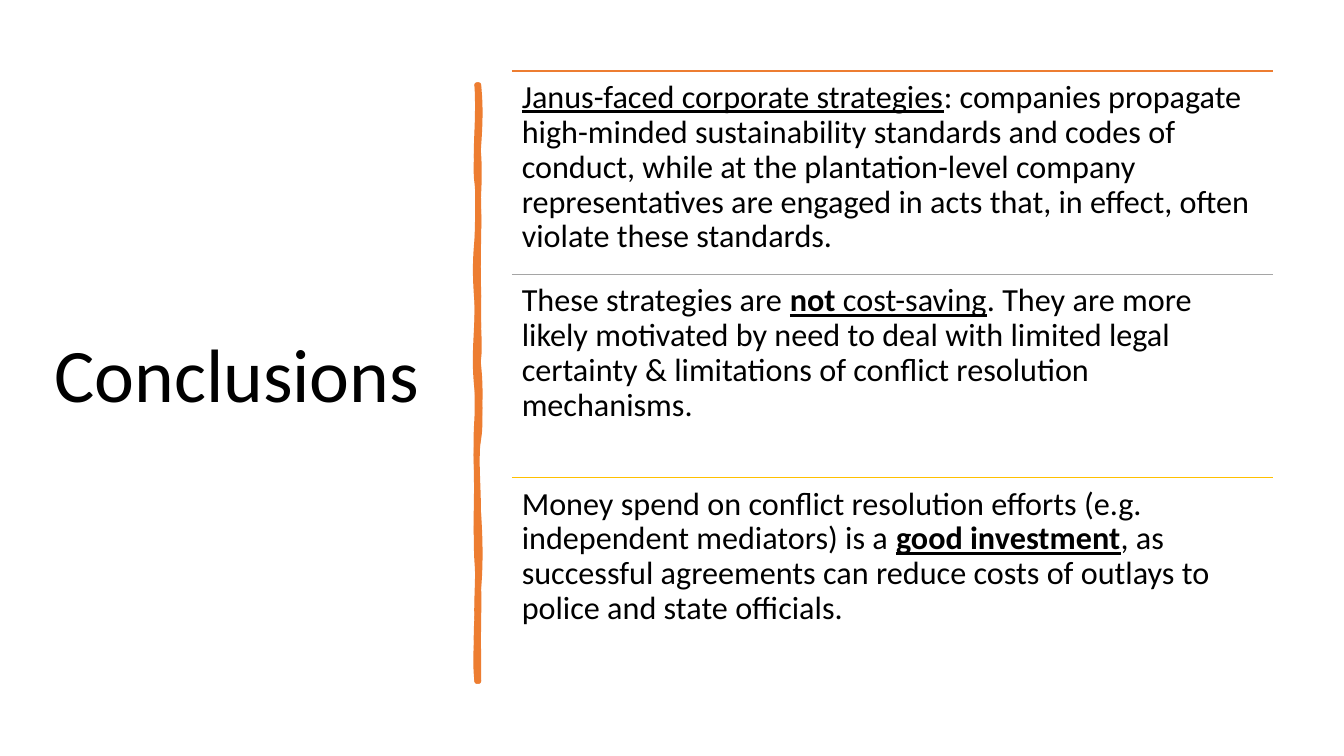
from lxml import etree
from pptx import Presentation
from pptx.dml.color import RGBColor
from pptx.enum.shapes import MSO_CONNECTOR
from pptx.enum.text import MSO_ANCHOR
from pptx.oxml.ns import qn
from pptx.util import Cm, Pt

STRAIGHT = MSO_CONNECTOR.STRAIGHT
TOP, MIDDLE = MSO_ANCHOR.TOP, MSO_ANCHOR.MIDDLE
ORANGE = "ED7D31"
UNIT = Cm(2.54)
RIGHT_EDGE, LEFT_EDGE = 4.75, 4.73
BAR_TOP, BAR_BOTTOM = 0.84, 6.76

STROKES = [
    ("none",
     [(4.77, 1.02, 4.77, 1.19, 1.46), (4.73, 1.73, 4.76, 1.95, 2.26),
      (4.74, 2.57, 4.75, 2.62, 2.94), (4.74, 3.25, 4.77, 3.42, 3.56),
      (4.73, 3.7, 4.79, 4.14, 4.36), (4.71, 4.57, 4.72, 4.84, 5.1),
      (4.77, 5.36, 4.77, 5.64, 5.84), (4.73, 6.03, 4.76, 6.5, BAR_BOTTOM)],
     [(4.74, 6.46, 4.71, 6.44, 6.13), (4.74, 5.83, 4.74, 5.7, 5.57),
      (4.72, 5.44, 4.72, 4.95, 4.77), (4.73, 4.59, 4.71, 4.45, 4.15),
      (4.74, 3.86, 4.72, 3.73, 3.35), (4.74, 2.98, 4.72, 2.81, 2.5),
      (4.74, 2.18, 4.75, 2, 1.81), (4.7, 1.63, 4.77, 1.04, BAR_TOP)]),
    ("norm",
     [(4.75, 1.15, 4.72, 1.25, 1.52), (4.77, 1.79, 4.74, 1.97, 2.08),
      (4.76, 2.2, 4.74, 2.55, 2.94), (4.76, 3.33, 4.73, 3.43, 3.62),
      (4.77, 3.81, 4.77, 3.97, 4.3), (4.72, 4.63, 4.75, 4.74, 5.16),
      (4.75, 5.57, 4.74, 5.53, 5.78), (4.76, 6.03, 4.74, 6.47, BAR_BOTTOM)],
     [(4.7, 6.49, 4.74, 6.32, 6.13), (4.72, 5.95, 4.75, 5.69, 5.39),
      (4.71, 5.1, 4.76, 5, 4.71), (4.7, 4.42, 4.77, 4.2, 3.86),
      (4.69, 3.51, 4.74, 3.25, 3), (4.71, 2.75, 4.71, 2.59, 2.38),
      (4.74, 2.16, 4.74, 1.85, 1.64), (4.71, 1.43, 4.75, 1.21, BAR_TOP)]),
]

CONCLUSIONS = [
    (ORANGE, [("Janus-faced corporate strategies", "u"),
              (": companies propagate high-minded sustainability standards and codes of "
               "conduct, while at the plantation-level company representatives are engaged "
               "in acts that, in effect, often violate these standards.", "")]),
    ("A5A5A5", [("These strategies are ", ""), ("not", "bu"), (" cost-saving", "u"),
                (". They are more likely motivated by need to deal with limited legal "
                 "certainty & limitations of conflict resolution mechanisms.", "")]),
    ("FFC000", [("Money spend on conflict resolution efforts (e.g. independent "
                 "mediators) is a ", ""), ("good investment", "bu"),
                (", as successful agreements can reduce costs of outlays to police and "
                 "state officials.", "")]),
]


def color(value):
    return RGBColor.from_string(value)


def add_command(outline, name, points):
    command = etree.SubElement(outline, qn(name))
    for x, y in points:
        etree.SubElement(command, qn("a:pt"),
                         x=str(round((x - LEFT_EDGE) * UNIT)),
                         y=str(round((y - BAR_TOP) * UNIT)))


def add_edge(outline, x, curves):
    for x1, y1, x2, y2, end in curves:
        add_command(outline, "a:cubicBezTo", [(x1, y1), (x2, y2), (x, end)])


class SlideBuilder:
    font = "Calibri"
    ink = "000000"

    def __init__(self, page):
        self.shapes = page.shapes

    def text(self, shapes, left, top, width, height, spans, size, inset, anchor):
        box = shapes.add_textbox(Cm(left), Cm(top), Cm(width), Cm(height))
        frame = box.text_frame
        frame.word_wrap = True
        frame.vertical_anchor = anchor
        frame.margin_left = frame.margin_right = Cm(0.25)
        frame.margin_top = frame.margin_bottom = Cm(inset)
        para = frame.paragraphs[0]
        para.line_spacing = 0.9
        para.font.name = self.font
        para.font.size = Pt(size)
        para.font.color.rgb = color(self.ink)
        for words, style in spans:
            span = para.add_run()
            span.text = words
            if "b" in style:
                span.font.bold = True
            if "u" in style:
                span.font.underline = True

    def rule(self, shapes, left, top, width, shade):
        line = shapes.add_connector(
            STRAIGHT, Cm(left), Cm(top), Cm(left + width), Cm(top))
        line.line.color.rgb = color(shade)
        line.line.width = Pt(1)
        etree.SubElement(line._element.spPr, qn("a:effectLst"))

    def brush_bar(self, strokes, shade):
        corners = [(round(x * UNIT), round(y * UNIT)) for x, y in (
            (RIGHT_EDGE, BAR_TOP), (RIGHT_EDGE, BAR_BOTTOM),
            (LEFT_EDGE, BAR_BOTTOM), (LEFT_EDGE, BAR_TOP))]
        builder = self.shapes.build_freeform(*corners[0])
        builder.add_line_segments(corners[1:], close=True)
        bar = builder.convert_to_shape()
        outlines = bar._element.spPr.find(".//" + qn("a:pathLst"))
        outlines.remove(outlines[0])
        for fill, right, left in strokes:
            outline = etree.SubElement(outlines, qn("a:path"), w=str(bar.width),
                                       h=str(bar.height), fill=fill)
            add_command(outline, "a:moveTo", [(RIGHT_EDGE, BAR_TOP)])
            add_edge(outline, RIGHT_EDGE, right)
            add_command(outline, "a:lnTo", [(LEFT_EDGE, BAR_BOTTOM)])
            add_edge(outline, LEFT_EDGE, left)
            etree.SubElement(outline, qn("a:close"))
        bar.shadow.inherit = False
        bar.fill.solid()
        bar.fill.fore_color.rgb = color(shade)
        bar.line.color.rgb = color(shade)
        bar.line.width = Pt(3.25)
        etree.SubElement(bar.line._get_or_add_ln(), qn("a:round"))

    def conclusions(self, rows, left, top, width, height):
        group = self.shapes.add_group_shape()
        for index, (shade, spans) in enumerate(rows):
            row_top = top + index * height
            self.rule(group.shapes, left, row_top, width, shade)
            self.text(group.shapes, left, row_top, width, height, spans, 23, 0.25, TOP)


def main():
    deck = Presentation()
    deck.slide_width, deck.slide_height = Cm(33.87), Cm(19.05)
    slide = SlideBuilder(deck.slides.add_slide(deck.slide_layouts[6]))
    slide.text(slide.shapes, 1.12, 1.78, 10.16, 15.5, [("Conclusions", "")],
               54, 0.13, MIDDLE)
    slide.brush_bar(STROKES, ORANGE)
    slide.conclusions(CONCLUSIONS, 12.9, 1.79, 19.18, 5.12)
    deck.save("out.pptx")


if __name__ == "__main__":
    main()
